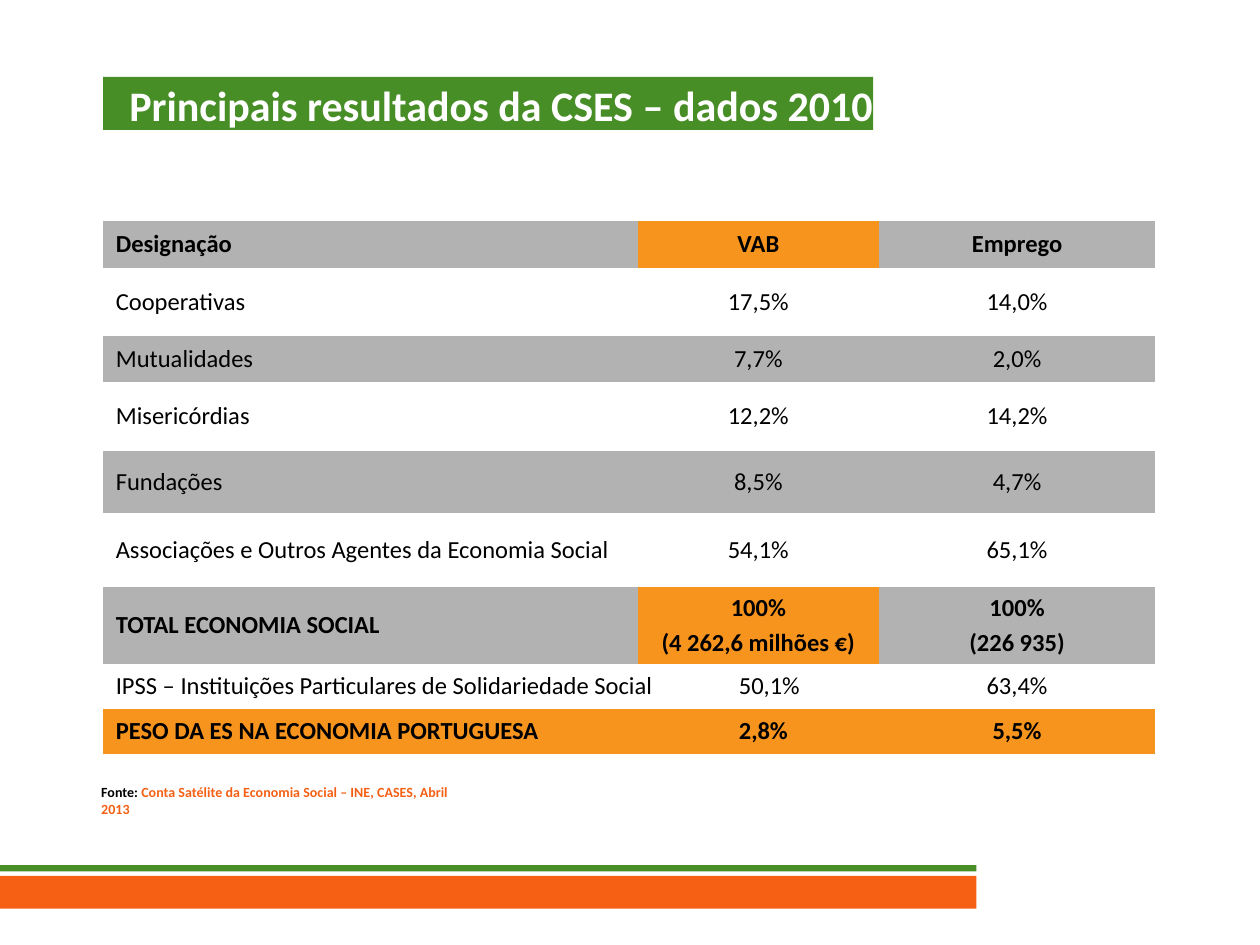
import pptx
import pptx.dml.color
import pptx.enum.shapes
import pptx.enum.text
import pptx.oxml
import pptx.oxml.ns
import pptx.util

Pt = pptx.util.Pt
ALIGN = pptx.enum.text.PP_ALIGN
ANCHOR = pptx.enum.text.MSO_ANCHOR
GREEN, ORANGE, AMBER = "488E27", "F66014", "F7941E"
GREY, WHITE, BLACK = "B2B2B2", "FFFFFF", "000000"


def paint(fill, color):
    fill.solid()
    fill.fore_color.rgb = pptx.dml.color.RGBColor.from_string(color)


def write(p, text, size=14, color=BLACK, bold=False, align=None):
    """Add a run to a paragraph; align, if given, applies to the paragraph."""
    r = p.add_run()
    r.text = text
    r.font.name, r.font.size, r.font.bold = "Calibri", Pt(size), bold
    paint(r.font.fill, color)
    if align is not None:
        p.alignment = align


prs = pptx.Presentation()
prs.slide_width, prs.slide_height = Pt(720), Pt(540)
s = prs.slides.add_slide(prs.slide_layouts[5])

# Footer bars
for top, height, color in [(500.5, 18.75, ORANGE), (494.3, 3.6, GREEN)]:
    bar = s.shapes.add_shape(pptx.enum.shapes.MSO_SHAPE.RECTANGLE,
                             Pt(0), Pt(top), Pt(558), Pt(height))
    bar.shadow.inherit = False
    paint(bar.fill, color)
    bar.line.fill.background()

# Title
title = s.shapes.title
title.left, title.top, title.width, title.height = Pt(59), Pt(44), Pt(440), Pt(30.25)
paint(title.fill, GREEN)
tf = title.text_frame
tf.margin_left = tf.margin_top = tf.margin_right = tf.margin_bottom = 0
tf.vertical_anchor = ANCHOR.TOP
tf.auto_size = pptx.enum.text.MSO_AUTO_SIZE.NONE
tf.word_wrap = True
p = tf.paragraphs[0]
p.line_spacing = 1.06
write(p, "Principais resultados da CSES – dados 2010", size=24, color=WHITE,
      bold=True, align=ALIGN.RIGHT)

# Source note
tf = s.shapes.add_textbox(Pt(50.75), Pt(444.25), Pt(226), Pt(48)).text_frame
tf.word_wrap = True
p = tf.paragraphs[0]
write(p, "Fonte: ", size=8, bold=True)
write(p, "Conta Satélite da Economia Social – INE, CASES, Abril 2013", size=8,
      color=ORANGE, bold=True)

# Results table: row height, bold, fill of each column, texts
# A row with None in the middle spans two columns and sets its value by a tab.
rows = [
    (27, True, (GREY, AMBER, GREY), ("Designação", "VAB", "Emprego")),
    (39, False, (WHITE,) * 3, ("Cooperativas", "17,5%", "14,0%")),
    (26, False, (GREY,) * 3, ("Mutualidades", "7,7%", "2,0%")),
    (39.5, False, (WHITE,) * 3, ("Misericórdias", "12,2%", "14,2%")),
    (35.5, False, (GREY,) * 3, ("Fundações", "8,5%", "4,7%")),
    (42.5, False, (WHITE,) * 3,
     ("Associações e Outros Agentes da Economia Social", "54,1%", "65,1%")),
    (43.5, True, (GREY, AMBER, GREY),
     ("TOTAL ECONOMIA SOCIAL", "100%\n(4 262,6 milhões €)", "100%\n(226 935)")),
    (25.75, False, (WHITE,) * 3,
     ("IPSS – Instituições Particulares de Solidariedade Social\t50,1%", None, "63,4%")),
    (25.75, True, (AMBER,) * 3,
     ("PESO DA ES NA ECONOMIA PORTUGUESA\t2,8%", None, "5,5%")),
]
widths = [305.5, 137.75, 158]
table = s.shapes.add_table(len(rows), len(widths), Pt(59), Pt(126.25), Pt(sum(widths)),
                           Pt(sum(row[0] for row in rows))).table
style = table._tbl.tblPr.find(pptx.oxml.ns.qn("a:tableStyleId"))
style.text = "{2D5ABB26-0587-4C30-8999-92F81FD0307C}"  # no style, no grid
for column, width in zip(table.columns, widths):
    column.width = Pt(width)

for i, (height, bold, fills, texts) in enumerate(rows):
    table.rows[i].height = Pt(height)
    if texts[1] is None:
        table.cell(i, 0).merge(table.cell(i, 1))
    for j, (color, text) in enumerate(zip(fills, texts)):
        cell = table.cell(i, j)
        paint(cell.fill, color)
        if text is None:
            continue
        cell.vertical_anchor = ANCHOR.MIDDLE
        cell.margin_top = cell.margin_bottom = Pt(3)
        tf = cell.text_frame
        for k, line in enumerate(text.split("\n")):
            p = tf.add_paragraph() if k else tf.paragraphs[0]
            if k:
                p.space_before = Pt(2.8)
            if "\t" in line:
                p._p.get_or_add_pPr().append(pptx.oxml.parse_xml(
                    f'<a:tabLst {pptx.oxml.ns.nsdecls("a")}>'
                    f'<a:tab pos="{Pt(356)}" algn="l"/></a:tabLst>'))
            write(p, line, bold=bold, align=ALIGN.CENTER if j else ALIGN.LEFT)

prs.save("out.pptx")
